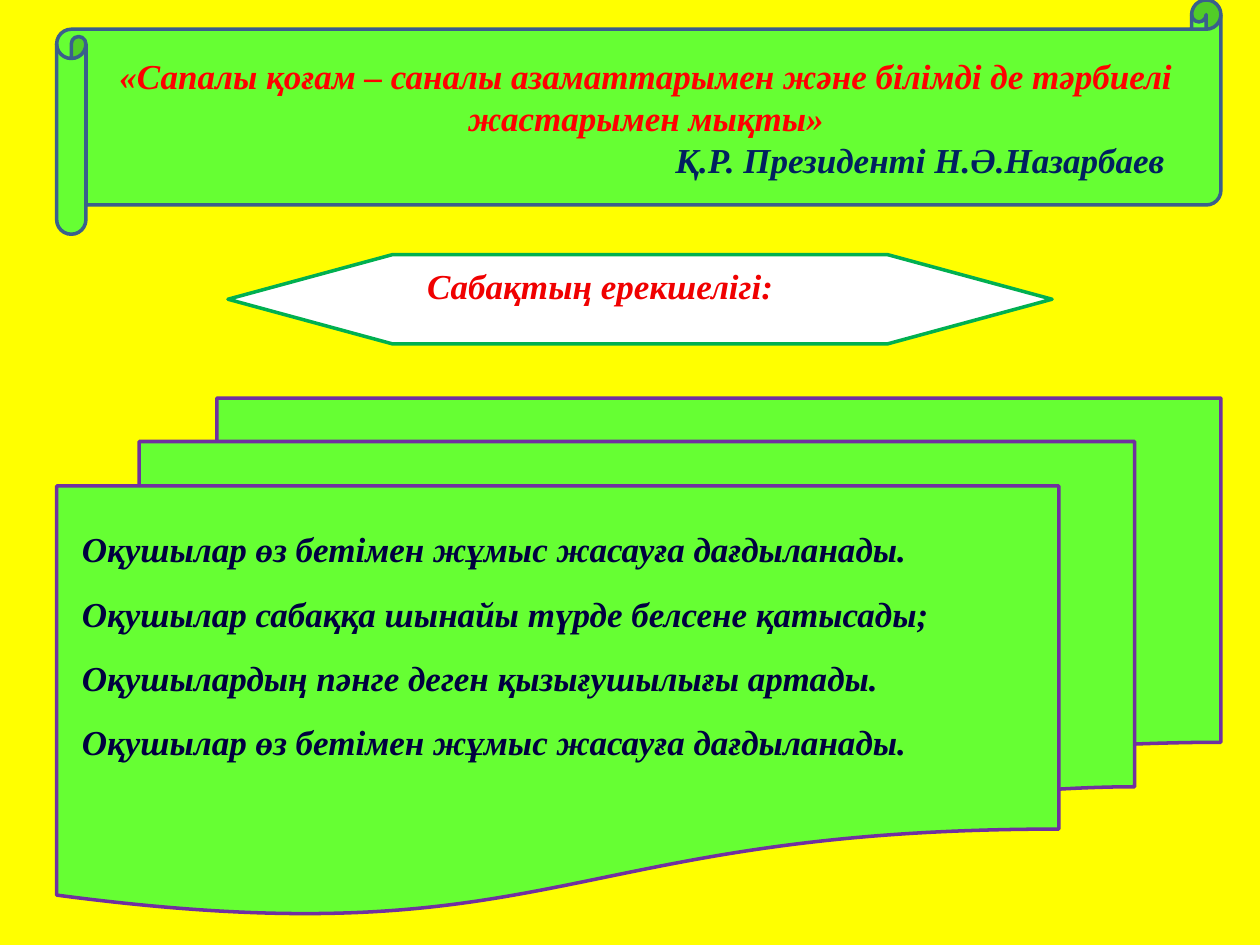
from dataclasses import dataclass
from typing import Any

import pptx
import pptx.dml.color
import pptx.enum.shapes
import pptx.enum.text
import pptx.util

COLORS = {
    "background": "FFFF00",
    "paper": "66FF33",
    "white": "FFFFFF",
    "heading_line": "00B050",
    "documents_line": "7030A0",
    "scroll_line": "3A5F8C",
    "heading": "F00000",
    "benefit": "000040",
    "quote": "FF0000",
    "author": "002060",
}
COLUMNS, ROWS = 100, 75
WIDTH, HEIGHT = pptx.util.Inches(10), pptx.util.Inches(7.5)
KINDS = pptx.enum.shapes.MSO_SHAPE
ALIGN = pptx.enum.text.PP_ALIGN
ANCHOR = pptx.enum.text.MSO_ANCHOR

QUOTE = (
    "«Сапалы қоғам – саналы азаматтарымен және білімді де "
    "тәрбиелі жастарымен мықты»"
)
AUTHOR = "Қ.Р. Президенті Н.Ә.Назарбаев"
BENEFITS = (
    "Оқушылар өз бетімен жұмыс жасауға дағдыланады.",
    "Оқушылар сабаққа шынайы түрде белсене қатысады;",
    "Оқушылардың пәнге деген қызығушылығы артады.",
    "Оқушылар өз бетімен жұмыс жасауға дағдыланады.",
)


@dataclass(frozen=True)
class Area:
    column: float
    row: float
    columns: float
    rows: float

    def lengths(self) -> tuple[int, int, int, int]:
        return (
            across(self.column),
            down(self.row),
            across(self.columns),
            down(self.rows),
        )


@dataclass(frozen=True)
class Panel:
    kind: Any
    area: Area
    fill: str
    line: str | None = None


HEADING = Panel(
    KINDS.FLOWCHART_PREPARATION, Area(18.1, 20.2, 65.4, 7.1), "white", "heading_line"
)
DOCUMENTS = Panel(
    KINDS.FLOWCHART_MULTIDOCUMENT, Area(4.5, 31.6, 92.4, 41), "paper", "documents_line"
)
SCROLL = Panel(KINDS.HORIZONTAL_SCROLL, Area(4.5, 0, 92.4, 18.6), "paper", "scroll_line")
BENEFIT_AREA = Area(6.5, 41.9, 76.4, 5.1)


def across(columns: float) -> int:
    return round(WIDTH * columns / COLUMNS)


def down(rows: float) -> int:
    return round(HEIGHT * rows / ROWS)


def color(name: str) -> pptx.dml.color.RGBColor:
    return pptx.dml.color.RGBColor.from_string(COLORS[name])


def draw_panel(shapes: Any, panel: Panel) -> Any:
    shape = shapes.add_shape(panel.kind, *panel.area.lengths())
    shape.shadow.inherit = False
    shape.fill.solid()
    shape.fill.fore_color.rgb = color(panel.fill)
    if panel.line:
        shape.line.color.rgb = color(panel.line)
        shape.line.width = pptx.util.Pt(2)
    else:
        shape.line.fill.background()
    return shape


def set_frame(box: Any, *, wrap: bool, anchor: Any, inset: bool) -> None:
    frame = box.text_frame
    frame.word_wrap = wrap
    frame.vertical_anchor = anchor
    if not inset:
        frame.margin_left = frame.margin_right = 0
        frame.margin_top = frame.margin_bottom = 0


def write(para: Any, text: str, *, ink: str, align: Any = ALIGN.LEFT, indent: float = 0) -> None:
    para.alignment = align
    if indent:
        para._p.get_or_add_pPr().set("marL", str(across(indent)))
    span = para.add_run()
    span.text = text
    span.font.name = "Times New Roman"
    span.font.size = pptx.util.Pt(20)
    span.font.bold = span.font.italic = True
    span.font.color.rgb = color(ink)


def draw_heading(page: Any) -> None:
    group = page.shapes.add_group_shape()
    draw_panel(group.shapes, HEADING)
    box = group.shapes.add_textbox(*Area(33.9, 21, 45.6, 5.4).lengths())
    set_frame(box, wrap=False, anchor=ANCHOR.TOP, inset=False)
    write(box.text_frame.paragraphs[0], "Сабақтың ерекшелігі:", ink="heading")


def draw_benefits(page: Any) -> None:
    group = page.shapes.add_group_shape()
    draw_panel(group.shapes, DOCUMENTS)
    first = BENEFIT_AREA
    for index, benefit in enumerate(BENEFITS):
        area = Area(first.column, first.row + index * first.rows, first.columns, first.rows)
        box = draw_panel(group.shapes, Panel(KINDS.RECTANGLE, area, "paper"))
        set_frame(box, wrap=False, anchor=ANCHOR.TOP, inset=False)
        write(box.text_frame.paragraphs[0], benefit, ink="benefit")


def draw_quote(page: Any) -> None:
    box = draw_panel(page.shapes, SCROLL)
    set_frame(box, wrap=True, anchor=ANCHOR.MIDDLE, inset=True)
    write(box.text_frame.paragraphs[0], QUOTE, ink="quote", align=ALIGN.CENTER)
    write(box.text_frame.add_paragraph(), AUTHOR, ink="author", indent=45.8)


def main() -> None:
    deck = pptx.Presentation()
    deck.slide_width, deck.slide_height = WIDTH, HEIGHT
    page = deck.slides.add_slide(deck.slide_layouts[6])
    page.background.fill.solid()
    page.background.fill.fore_color.rgb = color("background")
    draw_heading(page)
    draw_benefits(page)
    draw_quote(page)
    deck.save("out.pptx")


if __name__ == "__main__":
    main()
